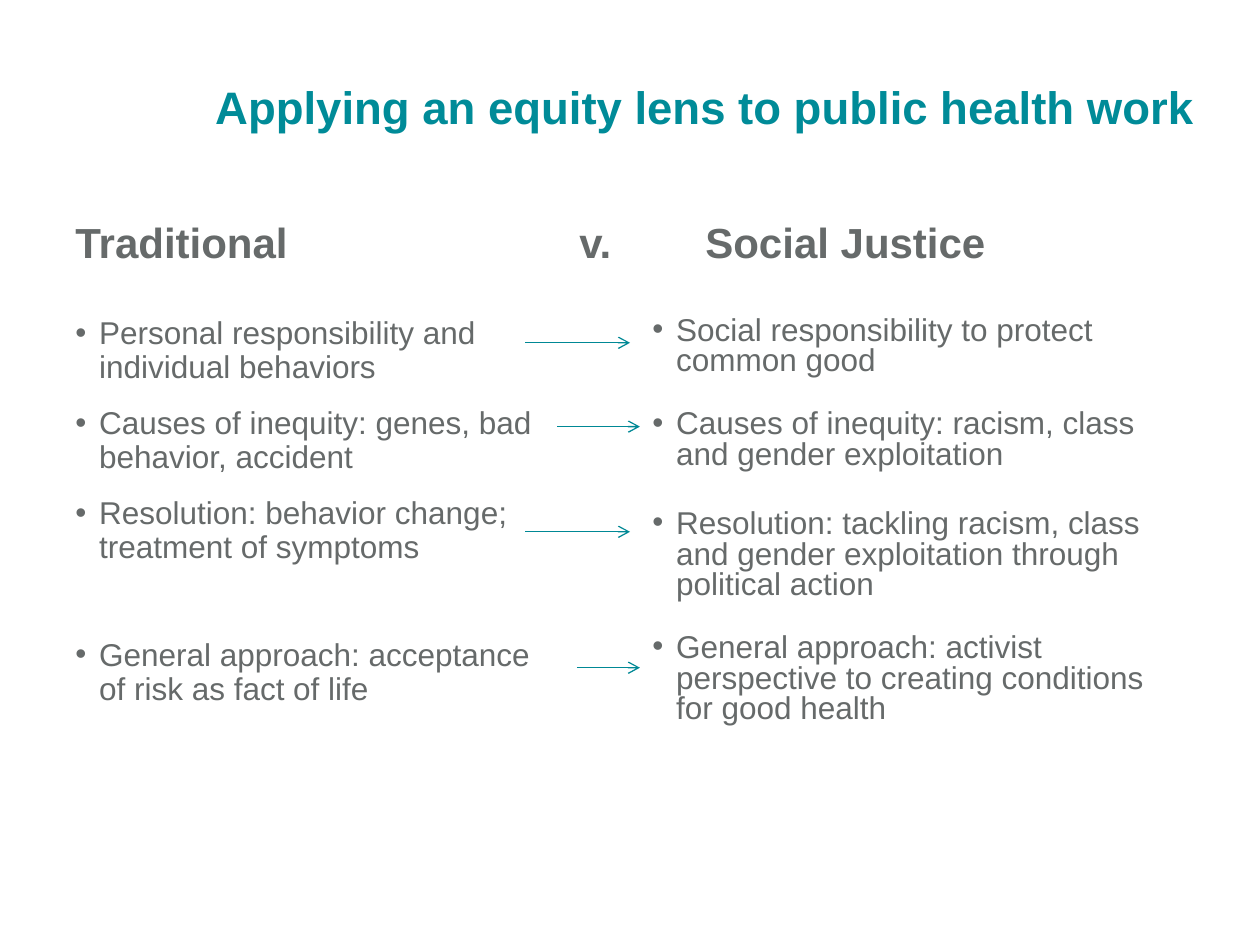
from lxml.etree import SubElement
from pptx import Presentation
from pptx.dml.color import RGBColor
from pptx.enum.shapes import MSO_CONNECTOR
from pptx.enum.text import PP_ALIGN
from pptx.oxml.ns import qn
from pptx.util import Cm, Pt

COLORS = {"title": "008B98", "body": "666A6A", "arrow": "008895"}
FONT = "Arial"
BODY_SIZE = 18
BULLET_INDENT = Cm(0.48)
TAB_STEP = Cm(2.54)

TRADITIONAL = [
    ("Personal responsibility and individual behaviors", 0.35, 0.35),
    ("Causes of inequity: genes, bad behavior, accident", 0.35, 0.35),
    ("Resolution: behavior change; treatment of symptoms\v", 0.35, 0.35),
    ("General approach: acceptance of risk as fact of life", 0.9, 0),
]
SOCIAL_JUSTICE = [
    ("Social responsibility to protect common good", 0.7, 0.35),
    ("Causes of inequity: racism, class and gender exploitation", 0.7, 0.35),
    ("Resolution: tackling racism, class and gender exploitation "
     "through political action", 0.9, 0.35),
    ("General approach: activist perspective to creating conditions "
     "for good health", 0.7, 0.35),
]
ARROWS = [
    (10.59, 12.7, 6.91),
    (11.23, 12.9, 8.6),
    (10.59, 12.7, 10.72),
    (11.63, 12.9, 13.46),
]


def add_frame(slide, left, top, width, height):
    box = slide.shapes.add_textbox(Cm(left), Cm(top), Cm(width), Cm(height))
    box.text_frame.word_wrap = True
    return box.text_frame


def write(paragraph, text, size=BODY_SIZE, color="body", bold=False,
          align=PP_ALIGN.LEFT, line_spacing=1.0, before=0, after=0):
    paragraph.text = text
    paragraph.alignment = align
    paragraph.line_spacing = line_spacing
    paragraph.space_before = Pt(round(before * size, 1))
    paragraph.space_after = Pt(round(after * size, 1))
    for run in paragraph.runs:
        run.font.name = FONT
        run.font.size = Pt(size)
        run.font.bold = bold
        run.font.color.rgb = RGBColor.from_string(COLORS[color])


def set_bullet(paragraph):
    properties = paragraph._p.get_or_add_pPr()
    properties.set("marL", str(BULLET_INDENT))
    properties.set("indent", str(-BULLET_INDENT))
    SubElement(properties, qn("a:buFont"), typeface=FONT)
    SubElement(properties, qn("a:buChar"), char="•")


def set_tabs(paragraph, count):
    tabs = SubElement(paragraph._p.get_or_add_pPr(), qn("a:tabLst"))
    for number in range(1, count + 1):
        SubElement(tabs, qn("a:tab"), pos=str(number * TAB_STEP), algn="l")


def add_bullets(slide, items, left, width, line_spacing):
    frame = add_frame(slide, left, 6.27, width, 12.57)
    for index, (text, before, after) in enumerate(items):
        paragraph = frame.add_paragraph() if index else frame.paragraphs[0]
        write(paragraph, text, line_spacing=line_spacing,
              before=before, after=after)
        set_bullet(paragraph)


def add_arrow(slide, start, end, y):
    connector = slide.shapes.add_connector(
        MSO_CONNECTOR.STRAIGHT, Cm(start), Cm(y), Cm(end), Cm(y))
    connector.line.width = Pt(0.75)
    connector.line.color.rgb = RGBColor.from_string(COLORS["arrow"])
    SubElement(connector.line._get_or_add_ln(), qn("a:tailEnd"), type="arrow")
    SubElement(connector._element.spPr, qn("a:effectLst"))


def main():
    presentation = Presentation()
    presentation.slide_width = Cm(25.4)
    presentation.slide_height = Cm(19.05)
    slide = presentation.slides.add_slide(presentation.slide_layouts[6])

    title = add_frame(slide, 0.84, 1.47, 23.5, 2.54).paragraphs[0]
    write(title, "Applying an equity lens to public health work",
          size=26, color="title", bold=True, align=PP_ALIGN.RIGHT)

    add_bullets(slide, TRADITIONAL, 1.27, 10.36, 0.9)
    add_bullets(slide, SOCIAL_JUSTICE, 12.9, 11.23, 0.8)
    for start, end, y in ARROWS:
        add_arrow(slide, start, end, y)

    heading = add_frame(slide, 1.27, 4.24, 22.86, 1.27).paragraphs[0]
    write(heading, "Traditional \t\t\tv. \tSocial Justice", size=24, bold=True)
    set_tabs(heading, 5)

    presentation.save("out.pptx")


if __name__ == "__main__":
    main()
